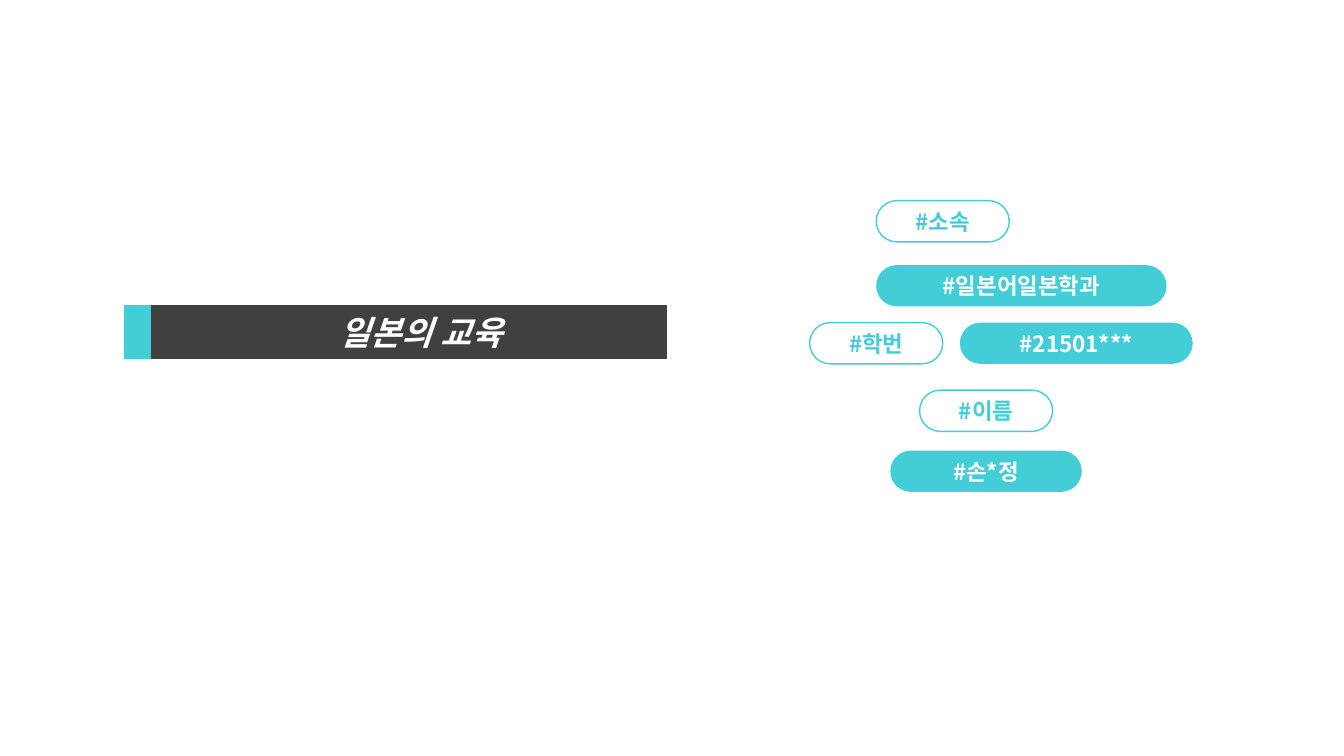
from dataclasses import dataclass

from lxml.etree import SubElement
from pptx import Presentation
from pptx.dml.color import RGBColor
from pptx.enum.shapes import MSO_SHAPE as Shape
from pptx.enum.text import MSO_ANCHOR as Anchor, MSO_AUTO_SIZE as Fit, PP_ALIGN as Align
from pptx.oxml.ns import qn
from pptx.text.text import TextFrame
from pptx.util import Inches, Pt

FONT = "Noto Sans CJK KR"
TEAL, DARK, WHITE = "43CDD7", "404040", "FFFFFF"
PILL_H = 0.41
LABEL_W = 1.32


@dataclass
class Pill:
    text: str
    left: float
    top: float
    width: float = LABEL_W
    solid: bool = False


PILLS = [
    Pill("#소속", 8.69, 1.99),
    Pill("#일본어일본학과", 8.69, 2.63, 2.88, True),
    Pill("#학번", 8.03, 3.2),
    Pill("#21501***", 9.52, 3.2, 2.31, True),
    Pill("#이름", 9.12, 3.87),
    Pill("#손*정", 8.83, 4.47, 1.9, True),
]


def rgb(code: str) -> RGBColor:
    return RGBColor.from_string(code)


def write(frame: TextFrame, text: str, size: int, color: str, italic: bool = False) -> None:
    frame.text = text
    frame.word_wrap = True
    frame.auto_size = Fit.NONE
    frame.vertical_anchor = Anchor.MIDDLE
    para = frame.paragraphs[0]
    para.alignment = Align.CENTER
    font = para.font
    font.size = Pt(size)
    font.bold = True
    font.italic = italic
    font.color.rgb = rgb(color)
    font.name = FONT
    # Hangul takes its typeface from the East Asian slot
    SubElement(font._element, qn("a:ea"), typeface=FONT)


def add_title(slide) -> None:
    bar = slide.shapes.title
    bar.left, bar.top = Inches(1.23), Inches(3.03)
    bar.width, bar.height = Inches(5.39), Inches(0.53)
    bar.fill.gradient()
    bar.fill.gradient_angle = 180
    # Both stops at one place give a sharp edge
    for stop, color in zip(bar.fill.gradient_stops, (DARK, TEAL)):
        stop.position = 0.95
        stop.color.rgb = rgb(color)
    write(bar.text_frame, "일본의 교육", 24, WHITE, italic=True)
    bar.text_frame.margin_left = Inches(0.6)


def add_pill(slide, pill: Pill) -> None:
    shape = slide.shapes.add_shape(
        Shape.ROUNDED_RECTANGLE, Inches(pill.left), Inches(pill.top),
        Inches(pill.width), Inches(PILL_H))
    shape.adjustments[0] = 0.5
    shape.shadow.inherit = False
    shape.fill.solid()
    shape.fill.fore_color.rgb = rgb(TEAL if pill.solid else WHITE)
    if pill.solid:
        shape.line.fill.background()
    else:
        shape.line.color.rgb = rgb(TEAL)
        shape.line.width = Pt(1)
    write(shape.text_frame, pill.text, 16, WHITE if pill.solid else TEAL)


def main() -> None:
    deck = Presentation()
    deck.slide_width, deck.slide_height = Inches(13.33), Inches(7.5)
    slide = deck.slides.add_slide(deck.slide_layouts.get_by_name("Title Only"))
    add_title(slide)
    for pill in PILLS:
        add_pill(slide, pill)
    deck.save("out.pptx")


if __name__ == "__main__":
    main()
